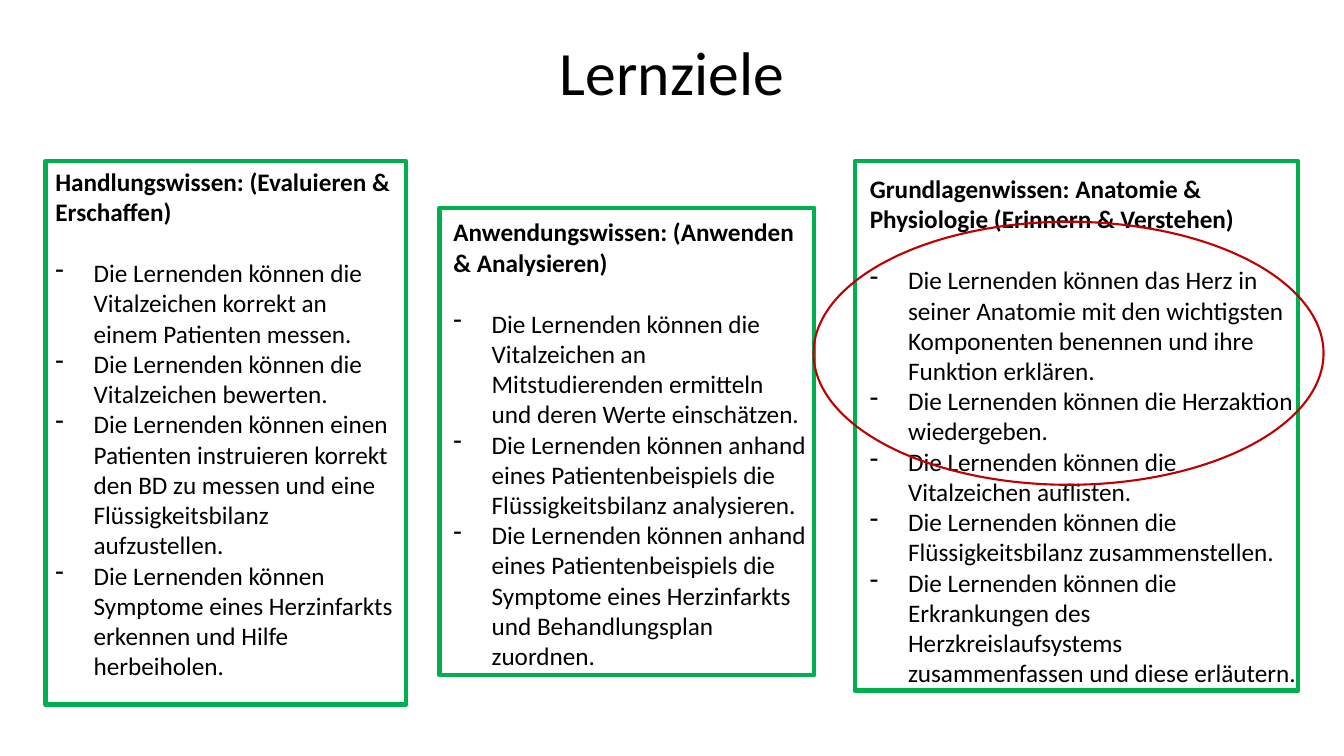
from dataclasses import dataclass

from lxml.etree import SubElement
from pptx import Presentation
from pptx.dml.color import RGBColor
from pptx.enum.shapes import MSO_SHAPE as Shape
from pptx.enum.text import MSO_ANCHOR as Anchor, PP_ALIGN as Align
from pptx.oxml.ns import qn
from pptx.util import Inches, Pt


@dataclass(frozen=True)
class Theme:
    font: str = "Calibri"
    text: str = "000000"
    frame: str = "00B050"
    highlight: str = "C00000"
    title_size: float = 44
    body_size: float = 18
    frame_width: float = 3
    highlight_width: float = 1.5
    heading_gap: float = 22
    indent: float = 0.38


class SlideBuilder:
    """Places elements by (left, top, width, height) in percent of the slide."""

    def __init__(self, presentation, theme):
        self.theme = theme
        self.size = presentation.slide_width, presentation.slide_height
        self.slide = presentation.slides.add_slide(presentation.slide_layouts[6])

    def place(self, area):
        return [round(share / 100 * self.size[i % 2]) for i, share in enumerate(area)]

    def text_box(self, area):
        text_frame = self.slide.shapes.add_textbox(*self.place(area)).text_frame
        text_frame.word_wrap = True
        return text_frame

    def format_text(self, paragraph, size, bold=False):
        for run in paragraph.runs:
            run.font.name = self.theme.font
            run.font.size = Pt(size)
            run.font.bold = bold
            run.font.color.rgb = RGBColor.from_string(self.theme.text)

    def title(self, area, text):
        text_frame = self.text_box(area)
        text_frame.vertical_anchor = Anchor.MIDDLE
        text_frame.text = text
        paragraph = text_frame.paragraphs[0]
        paragraph.alignment = Align.CENTER
        paragraph.line_spacing = 0.9
        self.format_text(paragraph, self.theme.title_size)

    def goals(self, area, heading, items):
        text_frame = self.text_box(area)
        text_frame.text = "\n".join([heading, *items])
        first, *bullets = text_frame.paragraphs
        first.space_after = Pt(self.theme.heading_gap)
        self.format_text(first, self.theme.body_size, bold=True)
        for paragraph in bullets:
            self.dash(paragraph)
            self.format_text(paragraph, self.theme.body_size)

    def dash(self, paragraph):
        properties = paragraph._p.get_or_add_pPr()
        indent = Inches(self.theme.indent)
        properties.set("marL", str(indent))
        properties.set("indent", str(-indent))
        SubElement(properties, qn("a:buChar")).set("char", "-")

    def outline(self, kind, area, color, width):
        shape = self.slide.shapes.add_shape(kind, *self.place(area))
        shape.shadow.inherit = False
        shape.fill.background()
        shape.line.color.rgb = RGBColor.from_string(color)
        shape.line.width = Pt(width)


# Each column: text area, frame area, heading, goals
COLUMNS = [
    ((3.38, 21.33, 26.85, 74), (3.38, 21.33, 26.85, 71.87),
     "Handlungswissen: (Evaluieren & Erschaffen)",
     ["Die Lernenden können die Vitalzeichen korrekt an einem Patienten messen.",
      "Die Lernenden können die Vitalzeichen bewerten.",
      "Die Lernenden können einen Patienten instruieren korrekt den BD zu messen "
      "und eine Flüssigkeitsbilanz aufzustellen.",
      "Die Lernenden können Symptome eines Herzinfarkts erkennen und Hilfe herbeiholen."]),
    ((33, 28, 27.9, 61.87), (32.7, 27.47, 27.9, 61.87),
     "Anwendungswissen: (Anwenden & Analysieren)",
     ["Die Lernenden können die Vitalzeichen an Mitstudierenden ermitteln "
      "und deren Werte einschätzen.",
      "Die Lernenden können anhand eines Patientenbeispiels die "
      "Flüssigkeitsbilanz analysieren.",
      "Die Lernenden können anhand eines Patientenbeispiels die Symptome "
      "eines Herzinfarkts und Behandlungsplan zuordnen."]),
    ((63.98, 22.27, 33.6, 70), (63.6, 21.33, 33, 70),
     "Grundlagenwissen: Anatomie & Physiologie (Erinnern & Verstehen)",
     ["Die Lernenden können das Herz in seiner Anatomie mit den wichtigsten "
      "Komponenten benennen und ihre Funktion erklären.",
      "Die Lernenden können die Herzaktion wiedergeben.",
      "Die Lernenden können die Vitalzeichen auflisten.",
      "Die Lernenden können die Flüssigkeitsbilanz zusammenstellen.",
      "Die Lernenden können die Erkrankungen des Herzkreislaufsystems "
      "zusammenfassen und diese erläutern."]),
]


def main():
    presentation = Presentation()
    presentation.slide_width, presentation.slide_height = Inches(13.33), Inches(7.5)
    theme = Theme()
    builder = SlideBuilder(presentation, theme)

    # Title and learning goals
    builder.title((6.88, 0.27, 86.25, 19.33), "Lernziele")
    for text_area, _, heading, items in COLUMNS:
        builder.goals(text_area, heading, items)

    # Green frames, then the red highlight on top
    for _, frame_area, _, _ in COLUMNS:
        builder.outline(Shape.RECTANGLE, frame_area, theme.frame, theme.frame_width)
    builder.outline(Shape.OVAL, (60.53, 29.33, 37.95, 34.8),
                    theme.highlight, theme.highlight_width)

    presentation.save("out.pptx")


if __name__ == "__main__":
    main()
